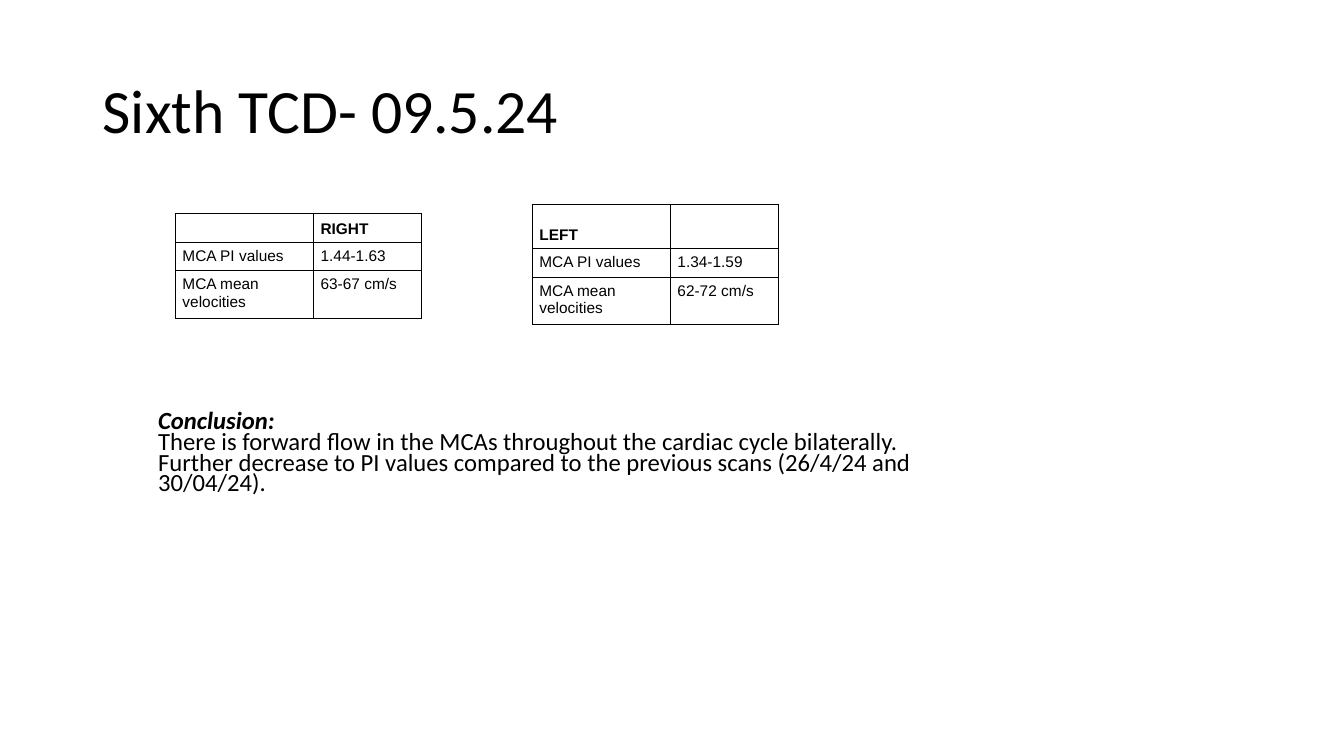
from pptx import Presentation
from pptx.dml.color import RGBColor
from pptx.enum.text import MSO_ANCHOR
from pptx.oxml import parse_xml
from pptx.oxml.ns import nsdecls
from pptx.util import Inches, Pt

COLORS = {"ink": "000000", "paper": "FFFFFF"}
COLUMN_WIDTHS = (1.37, 1.07)


def set_font(paragraph, name, size, bold=False, italic=False):
    font = paragraph.font
    font.name, font.size = name, Pt(size)
    font.bold, font.italic = bold, italic
    font.color.rgb = RGBColor.from_string(COLORS["ink"])


def add_text(slide, box, lines, size, spacing, anchor, heading=False):
    """Add a text box; with heading, its first line is bold italic."""
    frame = slide.shapes.add_textbox(*map(Inches, box)).text_frame
    frame.word_wrap = True
    frame.vertical_anchor = anchor
    frame.text = "\n".join(lines)
    for index, paragraph in enumerate(frame.paragraphs):
        paragraph.line_spacing = spacing
        emphasis = heading and index == 0
        set_font(paragraph, "Calibri", size, emphasis, emphasis)


def add_borders(cell):
    properties = cell._tc.get_or_add_tcPr()
    for position, side in enumerate(("lnL", "lnR", "lnT", "lnB")):
        properties.insert(position, parse_xml(
            f'<a:{side} {nsdecls("a")} w="{Pt(0.75)}"><a:solidFill>'
            f'<a:srgbClr val="{COLORS["ink"]}"/></a:solidFill></a:{side}>'))


def add_readings(slide, left, top, row_heights, rows):
    """Add one side's table of artery readings, with a bold header row."""
    table = slide.shapes.add_table(
        len(rows), len(COLUMN_WIDTHS), Inches(left), Inches(top),
        Inches(sum(COLUMN_WIDTHS)), Inches(sum(row_heights))).table
    for column, width in zip(table.columns, COLUMN_WIDTHS):
        column.width = Inches(width)
    for r, (height, values) in enumerate(zip(row_heights, rows)):
        table.rows[r].height = Inches(height)
        for c, value in enumerate(values):
            cell = table.cell(r, c)
            cell.text = value
            cell.margin_left = cell.margin_right = Inches(0.07)
            cell.margin_top = cell.margin_bottom = Inches(0.05)
            cell.vertical_anchor = MSO_ANCHOR.BOTTOM if r == 0 else MSO_ANCHOR.TOP
            cell.fill.solid()
            cell.fill.fore_color.rgb = RGBColor.from_string(COLORS["paper"])
            set_font(cell.text_frame.paragraphs[0], "Arial", 11, bold=r == 0)
            add_borders(cell)


def main():
    deck = Presentation()
    deck.slide_width, deck.slide_height = Inches(13.33), Inches(7.5)
    slide = deck.slides.add_slide(deck.slide_layouts[6])

    # Title
    add_text(slide, (0.92, 0.4, 11.5, 1.45), ["Sixth TCD- 09.5.24"],
             44, 0.9, MSO_ANCHOR.MIDDLE)

    # Conclusion
    add_text(slide, (1.47, 3.92, 8, 1.18), [
        "Conclusion:",
        "There is forward flow in the MCAs throughout the cardiac cycle bilaterally.",
        "Further decrease to PI values compared to the previous scans "
        "(26/4/24 and 30/04/24).",
    ], 17.6, 0.7, MSO_ANCHOR.MIDDLE, heading=True)

    # Readings for each side
    add_readings(slide, 1.74, 2.12, (0.27, 0.27, 0.44), [
        ("", "RIGHT"),
        ("MCA PI values", "1.44-1.63"),
        ("MCA mean velocities", "63-67 cm/s")])
    add_readings(slide, 5.28, 2.03, (0.44, 0.27, 0.44), [
        ("LEFT", ""),
        ("MCA PI values", "1.34-1.59"),
        ("MCA mean velocities", "62-72 cm/s")])

    deck.save("out.pptx")


if __name__ == "__main__":
    main()
